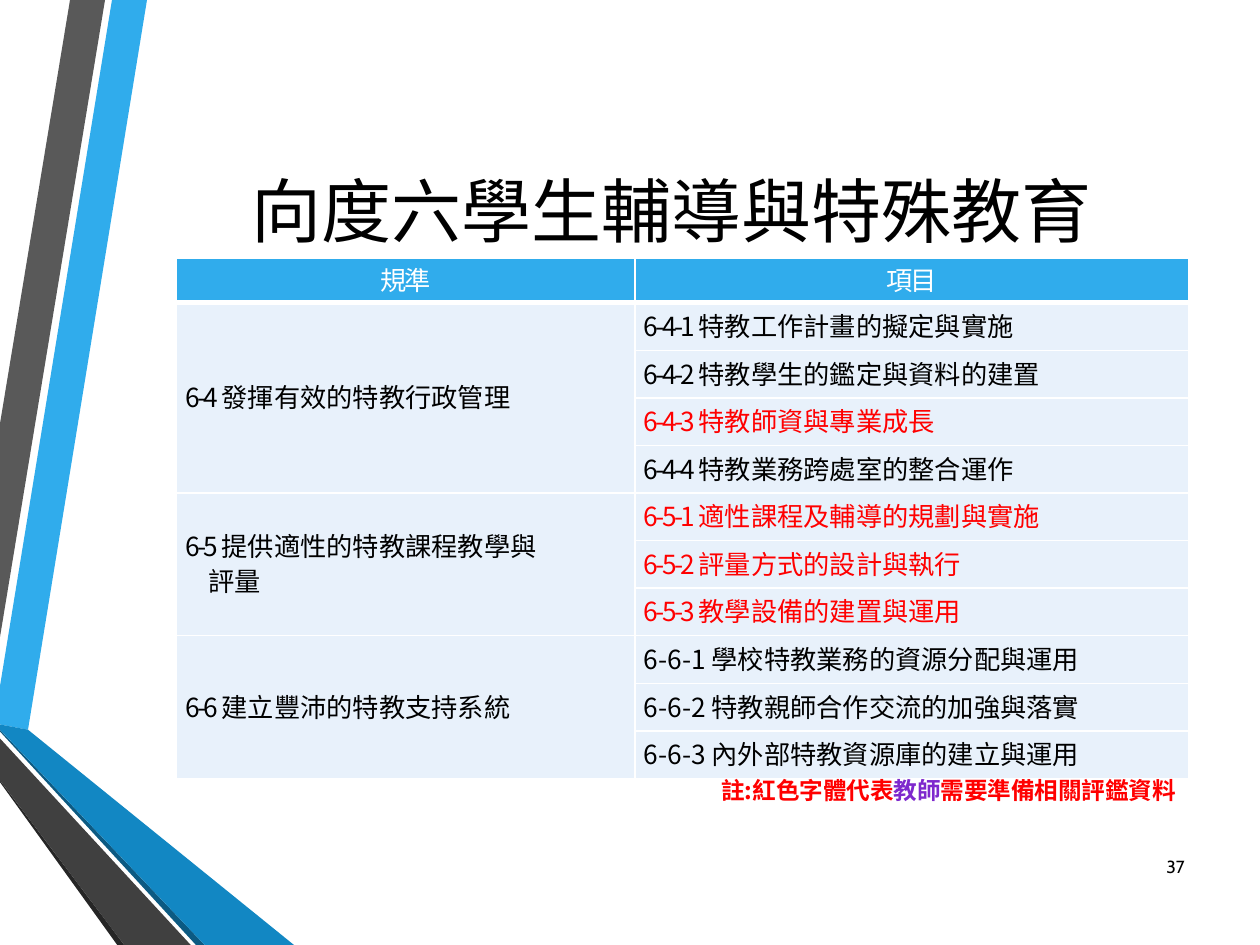
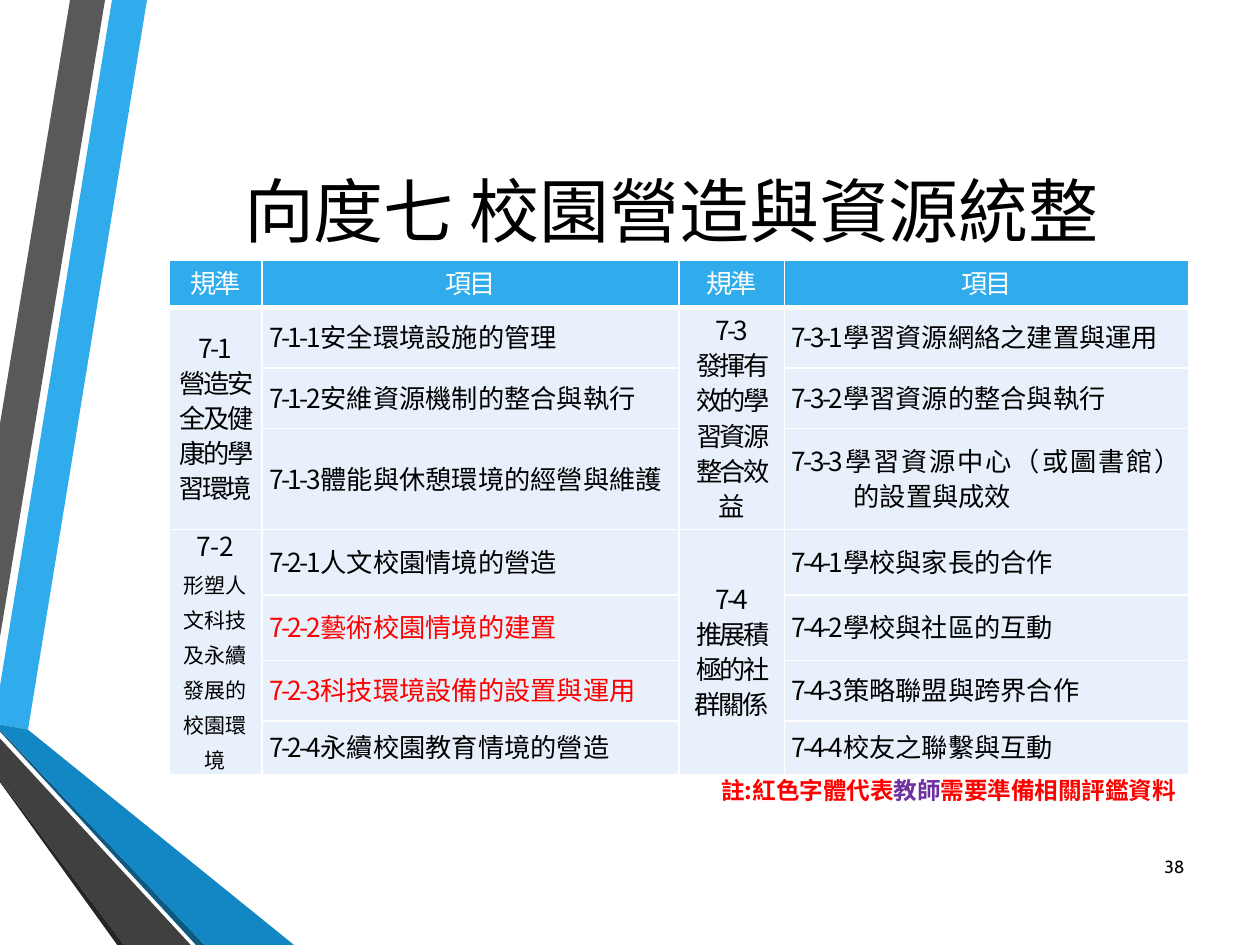
import dataclasses

import lxml.etree
import pptx
import pptx.dml.color
import pptx.enum.text
import pptx.oxml.ns
import pptx.util

Pt = pptx.util.Pt
qn = pptx.oxml.ns.qn
ALIGN = pptx.enum.text.PP_ALIGN
MIDDLE = pptx.enum.text.MSO_ANCHOR.MIDDLE


@dataclasses.dataclass(frozen=True)
class Theme:
    latin: str = "Cabin"
    cjk: str = "Noto Sans CJK SC"
    ink: str = "000000"
    white: str = "FFFFFF"
    accent: str = "30ACEC"
    row: str = "E8F1FB"
    alert: str = "FF0000"
    title_size: float = 40
    cell_size: float = 15
    small_size: float = 12
    note_size: float = 13.5
    number_size: float = 10
    line: float = 20
    tight: float = -1.5
    hang: float = 35.3


THEME = Theme()
FIRST_NUMBER = 37
TITLE_BOX = (87.8, 67.7, 591.8, 103.7)
NUMBER_BOX = (650.2, 481, 33.8, 28.8)
NOTE_BOX = (194.4, 439.9, 484.6, 23.8)

BANDS = [
    (THEME.accent, [(0, 391.7), (0, 414), (15.8, 416.9), (84.2, 0), (64.1, 0)]),
    ("595959", [(59.8, 0), (39.6, 0), (0, 241.9), (0, 364.3)]),
    ("262626", [(0, 445.7), (0, 447.1), (67, 540), (71.3, 540)]),
    ("0C5A82", [(0, 416.9), (0, 417.6), (112.3, 540), (117.4, 540)]),
    ("1287C3", [(0, 416.9), (117.4, 540), (167.8, 540), (15.8, 416.9), (0, 414)]),
    ("404040", [(0, 445.7), (71.3, 540), (108.7, 540), (0, 421.9)]),
]

TEACHER_ITEMS = {"6-4-3", "6-5-1", "6-5-2", "6-5-3", "7-2-2", "7-2-3"}
LOOSE_CODES = {"6-6-1", "6-6-2", "6-6-3", "7-2"}

GUIDANCE = [
    (["6-4 發揮有效的特教行政管理"],
     ["6-4-1 特教工作計畫的擬定與實施", "6-4-2 特教學生的鑑定與資料的建置",
      "6-4-3 特教師資與專業成長", "6-4-4 特教業務跨處室的整合運作"]),
    (["6-5 提供適性的特教課程教學與", "評量"],
     ["6-5-1 適性課程及輔導的規劃與實施", "6-5-2 評量方式的設計與執行",
      "6-5-3 教學設備的建置與運用"]),
    (["6-6 建立豐沛的特教支持系統"],
     ["6-6-1 學校特教業務的資源分配與運用", "6-6-2 特教親師合作交流的加強與落實",
      "6-6-3 內外部特教資源庫的建立與運用"]),
]

CAMPUS_LEFT = [
    (["7-1", "營造安全及健康的學習環境"],
     ["7-1-1安全環境設施的管理", "7-1-2安維資源機制的整合與執行",
      "7-1-3體能與休憩環境的經營與維護"]),
    (["7-2", "形塑人文科技及永續發展的校園環境"],
     ["7-2-1人文校園情境的營造", "7-2-2藝術校園情境的建置",
      "7-2-3科技環境設備的設置與運用", "7-2-4永續校園教育情境的營造"]),
]
CAMPUS_RIGHT = [
    (["7-3", "發揮有效的學習資源整合效益"],
     ["7-3-1學習資源網絡之建置與運用", "7-3-2學習資源的整合與執行",
      "7-3-3學習資源中心（或圖書館）的設置與成效"]),
    (["7-4", "推展積極的社群關係"],
     ["7-4-1學校與家長的合作", "7-4-2學校與社區的互動",
      "7-4-3策略聯盟與跨界合作", "7-4-4校友之聯繫與互動"]),
]


def rgb(color):
    return pptx.dml.color.RGBColor.from_string(color)


def points(values):
    return [Pt(value) for value in values]


def write(paragraph, text, size=THEME.cell_size, color=THEME.ink,
          font=THEME.cjk, bold=False, spacing=0):
    run = paragraph.add_run()
    run.text = text
    run.font.size = Pt(size)
    run.font.bold = bold
    run.font.name = font
    run.font.color.rgb = rgb(color)
    properties = run._r.get_or_add_rPr()
    properties.set("spc", str(round(spacing * 100)))
    lxml.etree.SubElement(properties, qn("a:ea"), typeface=THEME.cjk)
    return run


def set_line(paragraph, align, left=0, first=0):
    paragraph.alignment = align
    paragraph.line_spacing = Pt(THEME.line)
    properties = paragraph._p.get_or_add_pPr()
    properties.set("marL", str(Pt(left)))
    properties.set("indent", str(Pt(first)))


def split_code(text):
    name = text.lstrip("0123456789- ")
    return text[:len(text) - len(name)], name


def code_spacing(code):
    return 0 if code.strip() in LOOSE_CODES else THEME.tight


def draw_bands(slide):
    layout_tree = slide.slide_layout.shapes.element
    for position, (color, outline) in enumerate(BANDS, start=2):
        builder = slide.shapes.build_freeform(*outline[0], scale=Pt(1))
        builder.add_line_segments(outline[1:], close=True)
        band = builder.convert_to_shape()
        band.shadow.inherit = False
        band.fill.solid()
        band.fill.fore_color.rgb = rgb(color)
        band.line.fill.background()
        layout_tree.insert(position, band.element)


def place_title(slide, box, text):
    title = slide.shapes.title
    title.left, title.top, title.width, title.height = points(box)
    frame = title.text_frame
    frame.auto_size = pptx.enum.text.MSO_AUTO_SIZE.NONE
    frame.vertical_anchor = MIDDLE
    frame.paragraphs[0].alignment = ALIGN.CENTER
    write(frame.paragraphs[0], text, size=THEME.title_size, font=THEME.latin)


def add_right_text(slide, box):
    frame = slide.shapes.add_textbox(*points(box)).text_frame
    frame.word_wrap = True
    frame.paragraphs[0].alignment = ALIGN.RIGHT
    return frame


def place_number(slide, box, number):
    frame = add_right_text(slide, box)
    frame.vertical_anchor = MIDDLE
    run = write(frame.paragraphs[0], str(number), size=THEME.number_size,
                font=THEME.latin)
    field = run._r
    field.tag = qn("a:fld")
    field.set("id", "{B6F15528-21DE-4FAA-801E-634DDDAF4B2B}")
    field.set("type", "slidenum")


def place_note(slide, box, teacher_color):
    paragraph = add_right_text(slide, box).paragraphs[0]
    for text, color in [("註:紅色字體代表", THEME.alert), ("教師", teacher_color),
                        ("需要準備相關評鑑資料", THEME.alert)]:
        write(paragraph, text, size=THEME.note_size, color=color, bold=True)


def style_cell(cell, fill, margins, bottom=1):
    properties = cell._tc.get_or_add_tcPr()
    for side, width in [("L", 1), ("R", 1), ("T", 1), ("B", bottom)]:
        border = lxml.etree.SubElement(properties, qn(f"a:ln{side}"), w=str(Pt(width)))
        solid = lxml.etree.SubElement(border, qn("a:solidFill"))
        lxml.etree.SubElement(solid, qn("a:srgbClr"), val=THEME.white)
    cell.fill.solid()
    cell.fill.fore_color.rgb = rgb(fill)
    cell.vertical_anchor = MIDDLE
    cell.margin_left = cell.margin_right = Pt(margins[0])
    cell.margin_top = cell.margin_bottom = Pt(margins[1])


def add_grid(slide, origin, widths, heights, margins):
    box = (*origin, sum(widths), sum(heights))
    grid = slide.shapes.add_table(len(heights), len(widths), *points(box)).table
    for column, width in zip(grid.columns, widths):
        column.width = Pt(width)
    for row, height in zip(grid.rows, heights):
        row.height = Pt(height)
    for index in range(len(widths)):
        heading = grid.cell(0, index)
        style_cell(heading, THEME.accent, (5.2, 2.6), bottom=3)
        paragraph = heading.text_frame.paragraphs[0]
        set_line(paragraph, ALIGN.CENTER)
        write(paragraph, ("規準", "項目")[index % 2], color=THEME.white,
              spacing=THEME.tight)
        for row in range(1, len(heights)):
            style_cell(grid.cell(row, index), THEME.row, margins)
    return grid


def fill_item(cell, text):
    code, name = split_code(text)
    color = THEME.alert if code.strip() in TEACHER_ITEMS else THEME.ink
    paragraph = cell.text_frame.paragraphs[0]
    set_line(paragraph, ALIGN.JUSTIFY, THEME.hang, -THEME.hang)
    write(paragraph, code, color=color, spacing=code_spacing(code))
    write(paragraph, name, color=color)


def fill_wide_criterion(cell, lines):
    frame = cell.text_frame
    code, name = split_code(lines[0])
    set_line(frame.paragraphs[0], ALIGN.JUSTIFY)
    write(frame.paragraphs[0], code, spacing=THEME.tight)
    write(frame.paragraphs[0], name)
    for line in lines[1:]:
        paragraph = frame.add_paragraph()
        set_line(paragraph, ALIGN.JUSTIFY, left=13)
        write(paragraph, line)


def fill_narrow_criterion(cell, lines):
    code, name = lines
    frame = cell.text_frame
    spacing = code_spacing(code)
    name_size = THEME.cell_size if spacing else THEME.small_size
    for paragraph, text, size in [(frame.paragraphs[0], code, THEME.cell_size),
                                  (frame.add_paragraph(), name, name_size)]:
        set_line(paragraph, ALIGN.CENTER)
        write(paragraph, text, size=size, spacing=spacing)


def fill_criteria(grid, column, criteria, fill_criterion):
    row = 1
    for lines, items in criteria:
        last = row + len(items) - 1
        grid.cell(row, column).merge(grid.cell(last, column))
        fill_criterion(grid.cell(row, column), lines)
        for offset, item in enumerate(items):
            fill_item(grid.cell(row + offset, column + 1), item)
        row = last + 1


def guidance_table(slide):
    grid = add_grid(slide, (100.8, 147.8), [262, 316.6], [25] + [27.2] * 10, (5.2, 2.6))
    fill_criteria(grid, 0, GUIDANCE, fill_wide_criterion)


def campus_table(slide):
    grid = add_grid(slide, (96.5, 148.8), [53.2, 238.2, 60.4, 231],
                    [27, 34.6, 34.6, 57.6, 37.6, 37.4, 34.6, 30.2], (4.2, 0))
    for column, criteria in [(0, CAMPUS_LEFT), (2, CAMPUS_RIGHT)]:
        fill_criteria(grid, column, criteria, fill_narrow_criterion)


def main():
    deck = pptx.Presentation()
    deck.slide_width, deck.slide_height = Pt(720), Pt(540)
    deck.element.set("firstSlideNum", str(FIRST_NUMBER))
    title_only = deck.slide_layouts[5]
    dimensions = [
        ("向度六學生輔導與特殊教育", guidance_table, "7E28CD"),
        ("向度七 校園營造與資源統整", campus_table, "7030A0"),
    ]
    for number, (title, place_table, teacher_color) in enumerate(dimensions, FIRST_NUMBER):
        slide = deck.slides.add_slide(title_only)
        if number == FIRST_NUMBER:
            draw_bands(slide)
        place_title(slide, TITLE_BOX, title)
        place_number(slide, NUMBER_BOX, number)
        place_table(slide)
        place_note(slide, NOTE_BOX, teacher_color)
    deck.save("out.pptx")


if __name__ == "__main__":
    main()
